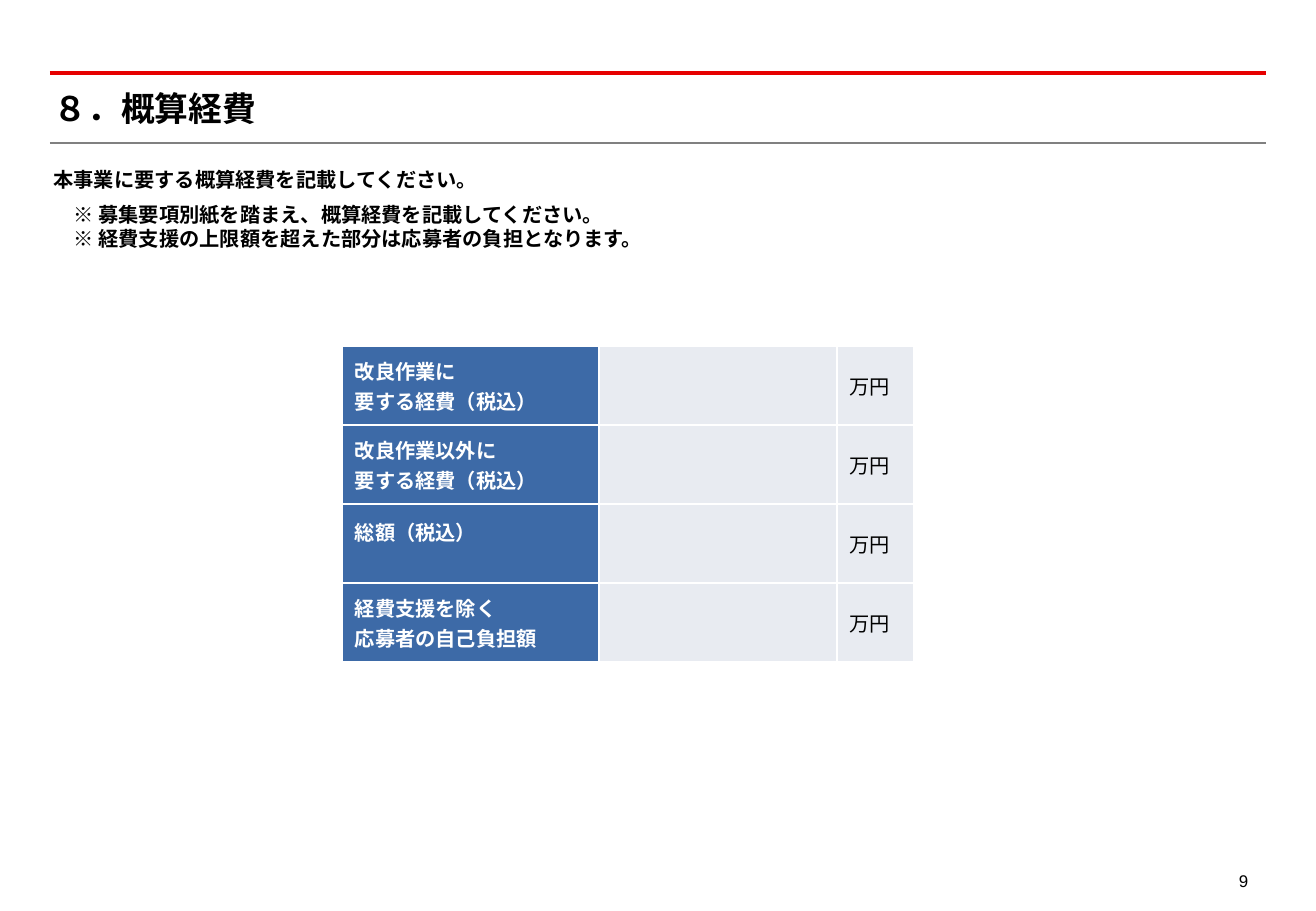
from pptx import Presentation
from pptx.dml.color import RGBColor
from pptx.enum.lang import MSO_LANGUAGE_ID
from pptx.enum.shapes import MSO_CONNECTOR
from pptx.enum.text import MSO_ANCHOR, PP_ALIGN
from pptx.oxml.ns import qn
from pptx.util import Inches, Pt
from lxml import etree

MIDDLE = MSO_ANCHOR.MIDDLE
LEFT, RIGHT = PP_ALIGN.LEFT, PP_ALIGN.RIGHT
JAPANESE = MSO_LANGUAGE_ID.JAPANESE
STRAIGHT = MSO_CONNECTOR.STRAIGHT

BLACK = RGBColor(0x00, 0x00, 0x00)
WHITE = RGBColor(0xFF, 0xFF, 0xFF)
RED = RGBColor(0xE6, 0x00, 0x00)
GRAY = RGBColor(0x80, 0x80, 0x80)
BLUE = RGBColor(0x3D, 0x6A, 0xA7)
PALE = RGBColor(0xE8, 0xEB, 0xF1)

MARGIN, TEXT_WIDTH = 0.44, 9.91
COLUMNS = [2.11, 1.96, 0.63]
ROW_HEIGHT = 0.65
ITEMS = [
    ["改良作業に", "要する経費（税込）"],
    ["改良作業以外に", "要する経費（税込）"],
    ["総額（税込）"],
    ["経費支援を除く", "応募者の自己負担額"],
]
NOTES = [
    "本事業に要する概算経費を記載してください。",
    "　※ 募集要項別紙を踏まえ、概算経費を記載してください。",
    "　※ 経費支援の上限額を超えた部分は応募者の負担となります。",
]


def write(tf, lines, size, color=BLACK, bold=False, align=LEFT):
    """Fill a text frame with one paragraph per line, all in one style."""
    for i, line in enumerate(lines):
        p = tf.paragraphs[0] if i == 0 else tf.add_paragraph()
        p.text = line
        p.alignment = align
        p.line_spacing = 1.0
        p.space_before = p.space_after = Pt(0)
        p.font.name = "Arial"
        p.font.size = Pt(size)
        p.font.bold = bold
        p.font.color.rgb = color
        p.font.language_id = JAPANESE


def clear_margins(tf):
    tf.margin_left = tf.margin_right = tf.margin_top = tf.margin_bottom = 0
    tf.word_wrap = True


prs = Presentation()
prs.slide_width, prs.slide_height = Inches(10.83), Inches(7.5)
s = prs.slides.add_slide(prs.slide_layouts[5])

# Rules above and below the title
for y, color, width in [(0.6, RED, 2), (1.18, GRAY, 1.25)]:
    rule = s.shapes.add_connector(
        STRAIGHT, Inches(0.41), Inches(y), Inches(10.42), Inches(y))
    rule.line.color.rgb = color
    rule.line.width = Pt(width)
    etree.SubElement(rule.element.spPr, qn("a:effectLst"))

# Title
title = s.shapes.title
title.left, title.top = Inches(MARGIN), Inches(0.72)
title.width, title.height = Inches(TEXT_WIDTH), Inches(0.34)
clear_margins(title.text_frame)
title.text_frame.vertical_anchor = MIDDLE
write(title.text_frame, ["８．概算経費"], 20, bold=True)

# Instructions
notes = s.shapes.add_textbox(
    Inches(MARGIN), Inches(1.38), Inches(TEXT_WIDTH), Inches(0.79))
clear_margins(notes.text_frame)
write(notes.text_frame, NOTES, 12, bold=True)
notes.text_frame.paragraphs[0].space_after = Pt(6)

# Cost table
table = s.shapes.add_table(
    len(ITEMS), len(COLUMNS), Inches(2.82), Inches(2.85),
    Inches(sum(COLUMNS)), Inches(ROW_HEIGHT * len(ITEMS))).table
table.first_row = table.horz_banding = False
for column, width in zip(table.columns, COLUMNS):
    column.width = Inches(width)
for row, item in zip(table.rows, ITEMS):
    row.height = Inches(ROW_HEIGHT)
    for cell, fill in zip(row.cells, [BLUE, PALE, PALE]):
        cell.fill.solid()
        cell.fill.fore_color.rgb = fill
        cell.vertical_anchor = MIDDLE
    label, amount, unit = row.cells
    write(label.text_frame, item, 12, WHITE, bold=True)
    write(unit.text_frame, ["万円"], 12)
    if len(item) == 1:
        label.margin_bottom = Inches(0.25)

# Page number
number = s.shapes.add_textbox(
    Inches(9.93), Inches(7.11), Inches(0.44), Inches(0.28))
number.text_frame.vertical_anchor = MIDDLE
write(number.text_frame, ["9"], 10, align=RIGHT)

prs.save("out.pptx")
